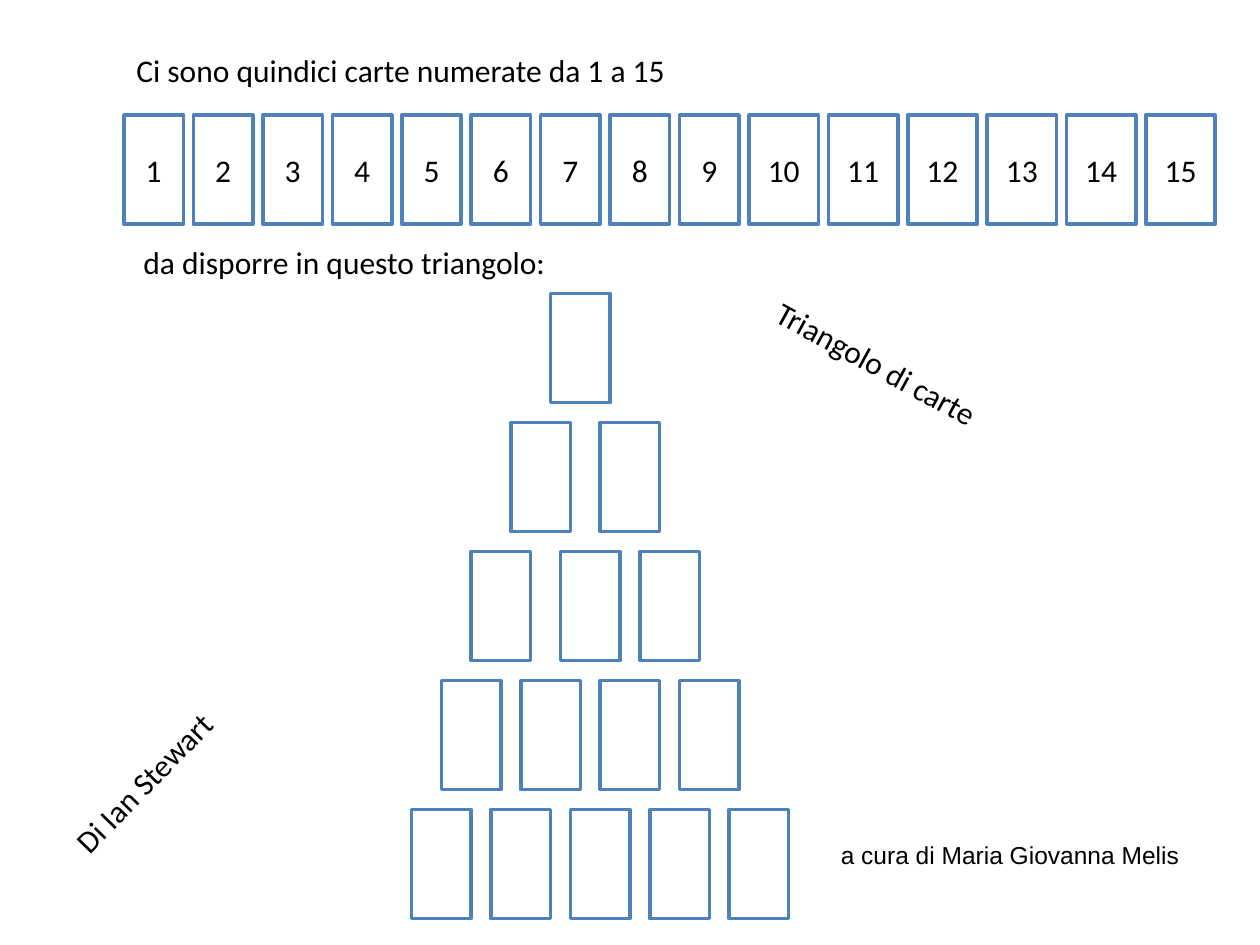
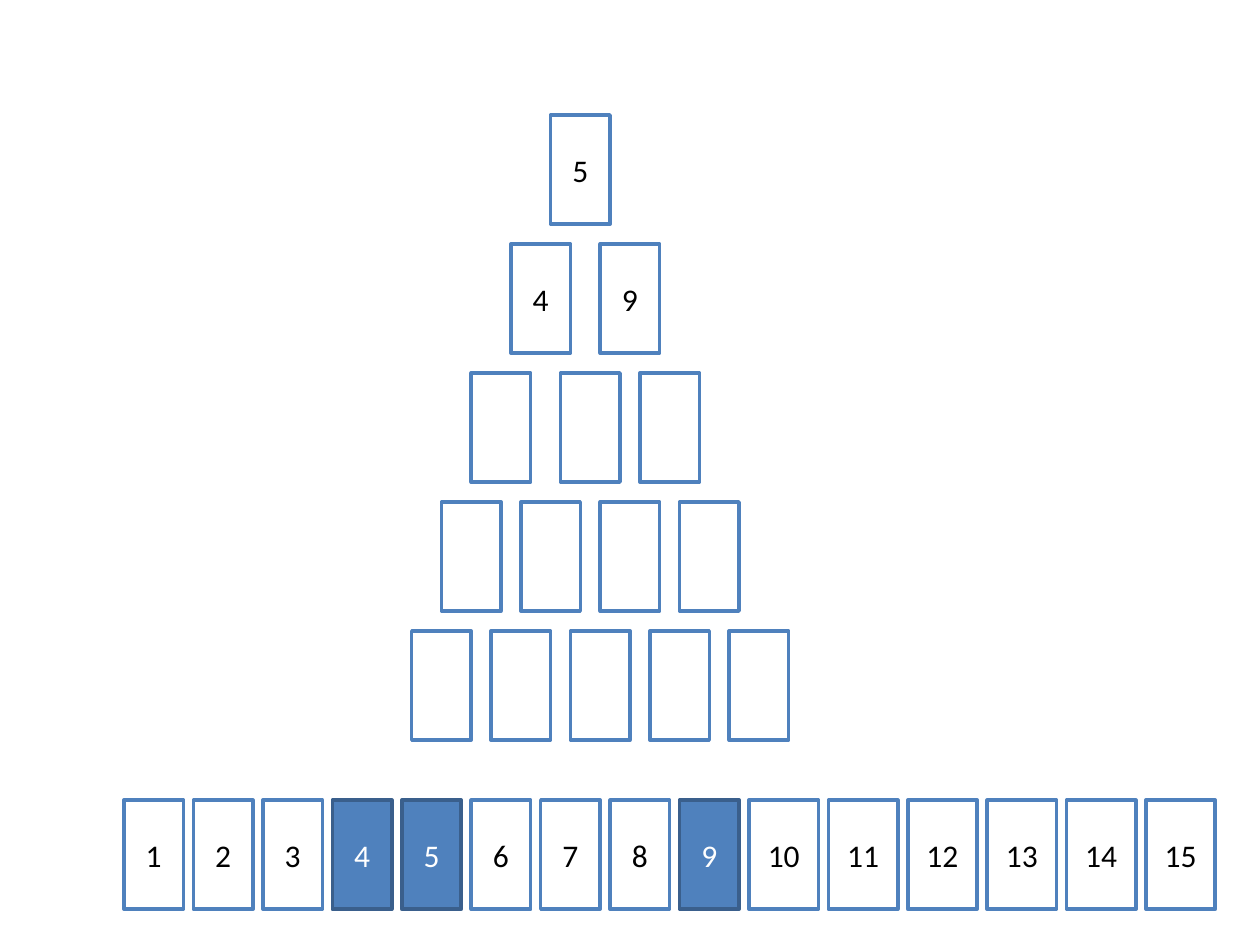
from dataclasses import dataclass

from pptx import Presentation
from pptx import util as u
from pptx.dml.color import RGBColor
from pptx.enum import shapes, text

# Content
INTRO = ["Ci sono quindici carte numerate da 1 a 15",
         " da disporre in questo triangolo:"]
TITLE = "Triangolo di carte"
AUTHOR = "Di Ian Stewart"
CREDIT = "a cura di Maria Giovanna Melis"
DECK = range(1, 16)
GUESS = [[5], [4, 9]]  # cards placed so far, from the top row

# Layout in centimetres
CARD_W, WIDE_W, CARD_H = 1.2, 1.4, 2.2
DECK_X, DECK_GAP = 2.5, 0.2
TRI_STEP, TRI_GAP = 2.6, 0.4
TRI_ROWS = [(11.1, []), (10.3, [0.2]), (9.5, [0.2, 0]),
            (8.9, [0] * 3), (8.3, [0] * 4)]  # left edge, extra gaps


@dataclass(frozen=True)
class Theme:
    blue: str = "4F81BD"
    dark: str = "3A5F8C"
    white: str = "FFFFFF"
    black: str = "000000"
    font: str = "Calibri"
    plain: str = "Arial"
    body: int = 18
    small: int = 14
    line: int = 2


THEME = Theme()


# Shared helpers
def color(code):
    return RGBColor.from_string(code)


def style(frame, size=THEME.body, font=THEME.font, ink=THEME.black):
    for para in frame.paragraphs:
        for run in para.runs:
            run.font.size = u.Pt(size)
            run.font.name = font
            run.font.color.rgb = color(ink)


def place(shape, x, y, w, h, turn=0):
    shape.left, shape.top = u.Cm(x), u.Cm(y)
    shape.width, shape.height = u.Cm(w), u.Cm(h)
    shape.rotation = turn


def label(slide, words, x, y, w, h, turn=0, **look):
    box = slide.shapes.add_textbox(0, 0, 0, 0)
    place(box, x, y, w, h, turn)
    box.text_frame.word_wrap = True
    box.text_frame.text = words
    style(box.text_frame, **look)
    return box.text_frame


def card(slide, x, y, w=CARD_W, num=None, used=False):
    rect = slide.shapes.add_shape(shapes.MSO_SHAPE.RECTANGLE, u.Cm(x), u.Cm(y),
                                  u.Cm(w), u.Cm(CARD_H))
    rect.shadow.inherit = False
    rect.fill.solid()
    rect.fill.fore_color.rgb = color(THEME.blue if used else THEME.white)
    rect.line.color.rgb = color(THEME.dark if used else THEME.blue)
    rect.line.width = u.Pt(THEME.line)
    if num is not None:
        frame = rect.text_frame
        frame.text = str(num)
        frame.vertical_anchor = text.MSO_ANCHOR.MIDDLE
        frame.paragraphs[0].alignment = text.PP_ALIGN.CENTER
        style(frame, ink=THEME.white if used else THEME.black)


def deck(slide, y, used=()):
    x = DECK_X
    for num in DECK:
        w = CARD_W if num < 10 else WIDE_W
        card(slide, x, y, w, num, num in used)
        x += w + DECK_GAP


def pyramid(slide, top, guess=()):
    for row, (x, extra) in enumerate(TRI_ROWS):
        nums = guess[row] if row < len(guess) else [None] * (row + 1)
        for num, more in zip(nums, extra + [0]):
            card(slide, x, top + row * TRI_STEP, num=num)
            x += CARD_W + TRI_GAP + more


# Slides
def rules(deck_file):
    slide = deck_file.slides.add_slide(deck_file.slide_layouts[5])
    frame = label(slide, "\n".join(INTRO), 2.5, 0.91, 20.6, 4.88)
    frame.paragraphs[1].space_before = u.Pt(88)
    deck(slide, 2.32)
    pyramid(slide, 5.92)

    title = slide.shapes.title
    place(title, 14.9, 7.92, 9.6, 1.02, 28.6)
    frame = title.text_frame
    frame.text = TITLE
    frame.auto_size = text.MSO_AUTO_SIZE.NONE
    frame.vertical_anchor = text.MSO_ANCHOR.TOP
    frame.paragraphs[0].alignment = text.PP_ALIGN.LEFT
    style(frame)

    label(slide, AUTHOR, 0.58, 14.66, 5.8, 1.02, 314.3)
    label(slide, CREDIT, 16.7, 16.8, 8.4, 0.85,
          size=THEME.small, font=THEME.plain)


def start(deck_file):
    slide = deck_file.slides.add_slide(deck_file.slide_layouts[6])
    pyramid(slide, 2.32, GUESS)
    deck(slide, 16.13, used=sum(GUESS, []))


def main():
    prs = Presentation()
    prs.slide_width, prs.slide_height = u.Cm(25.4), u.Cm(19.05)
    rules(prs)
    start(prs)
    prs.save("out.pptx")


if __name__ == "__main__":
    main()
